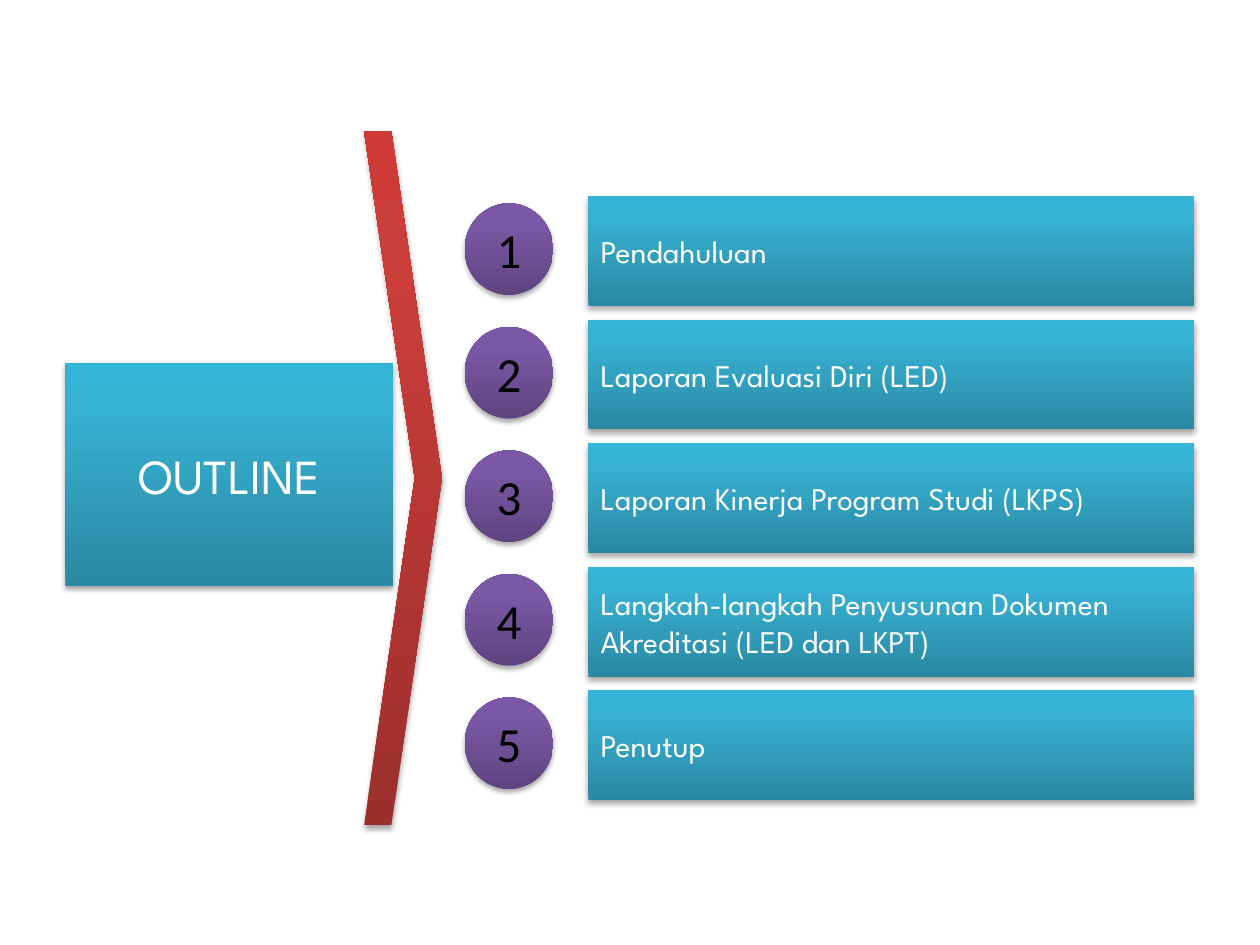
"""Build the outline slide with a title arrow, a chevron and five numbered topics."""
import dataclasses

import pptx
import pptx.dml.color
import pptx.enum.shapes
import pptx.enum.text
import pptx.oxml
import pptx.oxml.ns
import pptx.util

Cm = pptx.util.Cm
SHAPES = pptx.enum.shapes.MSO_SHAPE
ALIGN = pptx.enum.text.PP_ALIGN

COLORS = {"white": "FFFFFF", "black": "000000"}
GRADIENTS = {
    "teal": {0: "2A88A2", 80: "37B1D2", 100: "34B4D6"},
    "purple": {0: "5F4480", 80: "7B58A6", 100: "7C57A8"},
    "red": {0: "9C2F2D", 80: "CB3E3A", 100: "CE3B37"},
}
TOPICS = [
    "Pendahuluan",
    "Laporan Evaluasi Diri (LED)",
    "Laporan Kinerja Program Studi (LKPS)",
    "Langkah-langkah Penyusunan Dokumen Akreditasi (LED dan LKPT)",
    "Penutup",
]
ROW_PITCH = 2.49


@dataclasses.dataclass(frozen=True)
class Box:
    left: float
    top: float
    width: float
    height: float

    def lowered(self, distance: float) -> "Box":
        return dataclasses.replace(self, top=self.top + distance)

    def lengths(self) -> dict:
        return {name: Cm(value) for name, value in dataclasses.asdict(self).items()}


@dataclasses.dataclass(frozen=True)
class TextStyle:
    font: str
    size: int
    color: str
    alignment: ALIGN


TITLE_STYLE = TextStyle("League Spartan", 28, "white", ALIGN.CENTER)
TOPIC_STYLE = TextStyle("League Spartan", 18, "white", ALIGN.LEFT)
NUMBER_STYLE = TextStyle("Calibri", 28, "black", ALIGN.CENTER)

TITLE_BOX = Box(1.32, 7.32, 6.6, 4.5)
CHEVRON_BOX = Box(7.34, 2.64, 1.57, 14)
TOPIC_BOX = Box(11.86, 3.96, 12.22, 2.21)
NUMBER_BOX = Box(9.37, 4.1, 1.78, 1.85)


def append_property(shape, xml: str) -> None:
    namespace = pptx.oxml.ns.nsdecls("a")
    element = pptx.oxml.parse_xml(xml.replace(">", f" {namespace}>", 1))
    shape._element.spPr.append(element)


def decorate(shape, gradient: str) -> None:
    stops = "".join(
        f'<a:gs pos="{position * 1000}"><a:srgbClr val="{color}"/></a:gs>'
        for position, color in GRADIENTS[gradient].items()
    )
    append_property(
        shape,
        f'<a:gradFill rotWithShape="1"><a:gsLst>{stops}</a:gsLst>'
        '<a:lin ang="16200000" scaled="0"/></a:gradFill>',
    )
    shape.line.fill.background()
    append_property(
        shape,
        '<a:effectLst><a:outerShdw blurRad="40000" dist="23000" dir="5400000" '
        f'rotWithShape="0"><a:srgbClr val="{COLORS["black"]}"><a:alpha val="35000"/>'
        "</a:srgbClr></a:outerShdw></a:effectLst>",
    )


def write_text(shape, text: str, style: TextStyle) -> None:
    frame_format = {
        "word_wrap": True,
        "auto_size": pptx.enum.text.MSO_AUTO_SIZE.NONE,
        "vertical_anchor": pptx.enum.text.MSO_ANCHOR.MIDDLE,
    }
    for name, value in frame_format.items():
        setattr(shape.text_frame, name, value)
    paragraph = shape.text_frame.paragraphs[0]
    paragraph.alignment = style.alignment
    run = paragraph.add_run()
    run.text = text
    for name, value in {"name": style.font, "size": pptx.util.Pt(style.size)}.items():
        setattr(run.font, name, value)
    run.font.color.rgb = pptx.dml.color.RGBColor.from_string(COLORS[style.color])


def add_block(slide, kind: SHAPES, box: Box, gradient: str):
    shape = slide.shapes.add_shape(kind, **box.lengths())
    decorate(shape, gradient)
    return shape


def add_title(slide) -> None:
    title = slide.shapes.title
    for name, value in TITLE_BOX.lengths().items():
        setattr(title, name, value)
    append_property(
        title,
        '<a:prstGeom prst="homePlate"><a:avLst>'
        '<a:gd name="adj" fmla="val 26100"/></a:avLst></a:prstGeom>',
    )
    decorate(title, "teal")
    write_text(title, "OUTLINE", TITLE_STYLE)


def add_topic(slide, index: int, topic: str) -> None:
    distance = index * ROW_PITCH
    bar = add_block(slide, SHAPES.RECTANGLE, TOPIC_BOX.lowered(distance), "teal")
    write_text(bar, topic, TOPIC_STYLE)
    circle = add_block(slide, SHAPES.OVAL, NUMBER_BOX.lowered(distance), "purple")
    write_text(circle, str(index + 1), NUMBER_STYLE)


def main() -> None:
    presentation = pptx.Presentation()
    presentation.slide_width, presentation.slide_height = Cm(25.4), Cm(19.05)
    slide = presentation.slides.add_slide(
        presentation.slide_layouts.get_by_name("Title Only")
    )
    add_title(slide)
    chevron = add_block(slide, SHAPES.CHEVRON, CHEVRON_BOX, "red")
    chevron.adjustments[0] = 0.65
    for index, topic in enumerate(TOPICS):
        add_topic(slide, index, topic)
    presentation.save("out.pptx")


if __name__ == "__main__":
    main()
